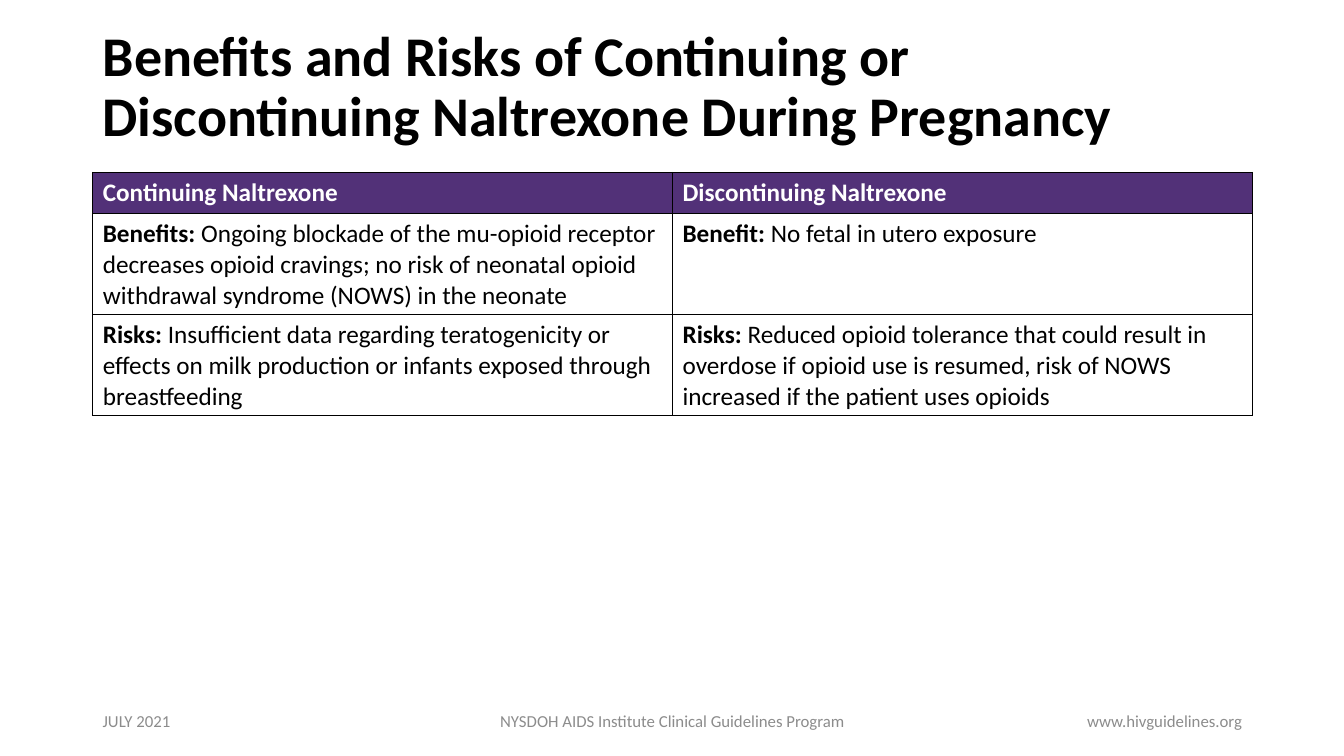
from pptx import Presentation
from pptx.dml.color import RGBColor as Rgb
from pptx.enum.text import MSO_ANCHOR as Anchor, PP_ALIGN as Align
from pptx.oxml import parse_xml
from pptx.oxml.ns import nsdecls
from pptx.util import Inches, Pt

HUES = {"ink": "000000", "head": "523178", "pale": "FFFFFF", "foot": "8C8C8C"}
LEFT, COL, ROW = 0.92, 0.5, 0.1
SPAN = 23

HEADS = ["Continuing Naltrexone", "Discontinuing Naltrexone"]
BODY = [
    [("Benefits: ", "Ongoing blockade of the mu-opioid receptor decreases opioid "
      "cravings; no risk of neonatal opioid withdrawal syndrome (NOWS) in the neonate"),
     ("Benefit: ", "No fetal in utero exposure")],
    [("Risks: ", "Insufficient data regarding teratogenicity or effects on milk "
      "production or infants exposed through breastfeeding"),
     ("Risks: ", "Reduced opioid tolerance that could result in overdose if opioid use "
      "is resumed, risk of NOWS increased if the patient uses opioids")],
]
FOOTS = [
    (0, 6, "JULY 2021", Align.LEFT),
    (7, 9, "NYSDOH AIDS Institute Clinical Guidelines Program", Align.CENTER),
    (17, 6, "www.hivguidelines.org", Align.RIGHT),
]


def write(para, text, size=18, hue="ink", bold=False):
    run = para.add_run()
    run.text = text
    font = run.font
    font.name, font.size, font.bold = "Calibri", Pt(size), bold
    font.color.rgb = Rgb.from_string(HUES[hue])


def edge(cell, hue="ink", width=1):
    """Draw a solid line on all four sides of a cell."""
    props = cell._tc.get_or_add_tcPr()
    for i, side in enumerate("LRTB"):
        props.insert(i, parse_xml(
            f'<a:ln{side} {nsdecls("a")} w="{Pt(width)}"><a:solidFill>'
            f'<a:srgbClr val="{HUES[hue]}"/></a:solidFill></a:ln{side}>'))


class Page:
    """A slide with a grid: columns count from the left margin, rows from the top."""

    def __init__(self, deck):
        self.slide = deck.slides.add_slide(deck.slide_layouts[6])

    def place(self, col, row, wide, high):
        return (Inches(LEFT + col * COL), Inches(row * ROW),
                Inches(wide * COL), Inches(high * ROW))

    def text(self, spot, words, align=Align.LEFT, lead=1.0, **style):
        frame = self.slide.shapes.add_textbox(*self.place(*spot)).text_frame
        frame.word_wrap = True
        frame.vertical_anchor = Anchor.MIDDLE
        para = frame.paragraphs[0]
        para.alignment, para.line_spacing = align, lead
        write(para, words, **style)

    def table(self, spot, heads, body, highs):
        size = len(body) + 1, len(heads)
        grid = self.slide.shapes.add_table(*size, *self.place(*spot)).table
        grid.first_row = grid.horz_banding = False
        for row, high in zip(grid.rows, highs):
            row.height = Inches(high * ROW)
        for c, head in enumerate(heads):
            cell = grid.cell(0, c)
            cell.fill.solid()
            cell.fill.fore_color.rgb = Rgb.from_string(HUES["head"])
            write(cell.text_frame.paragraphs[0], head, hue="pale", bold=True)
        for r, line in enumerate(body, 1):
            for c, (label, words) in enumerate(line):
                cell = grid.cell(r, c)
                cell.fill.background()
                para = cell.text_frame.paragraphs[0]
                write(para, label, bold=True)
                write(para, words)
        for cell in grid.iter_cells():
            edge(cell)


def main():
    deck = Presentation()
    deck.slide_width, deck.slide_height = Inches(13.33), Inches(7.5)
    page = Page(deck)
    page.text((0, 1.5, 21.26, 14.5),
              "Benefits and Risks of Continuing or Discontinuing Naltrexone During Pregnancy",
              lead=0.9, size=40, bold=True)
    highs = [4.1, 10, 10]
    page.table((0, 17.1, SPAN, sum(highs)), HEADS, BODY, highs)
    for col, wide, words, align in FOOTS:
        page.text((col, 69.5, wide, 4), words, align, size=12, hue="foot")
    deck.save("out.pptx")


if __name__ == "__main__":
    main()
